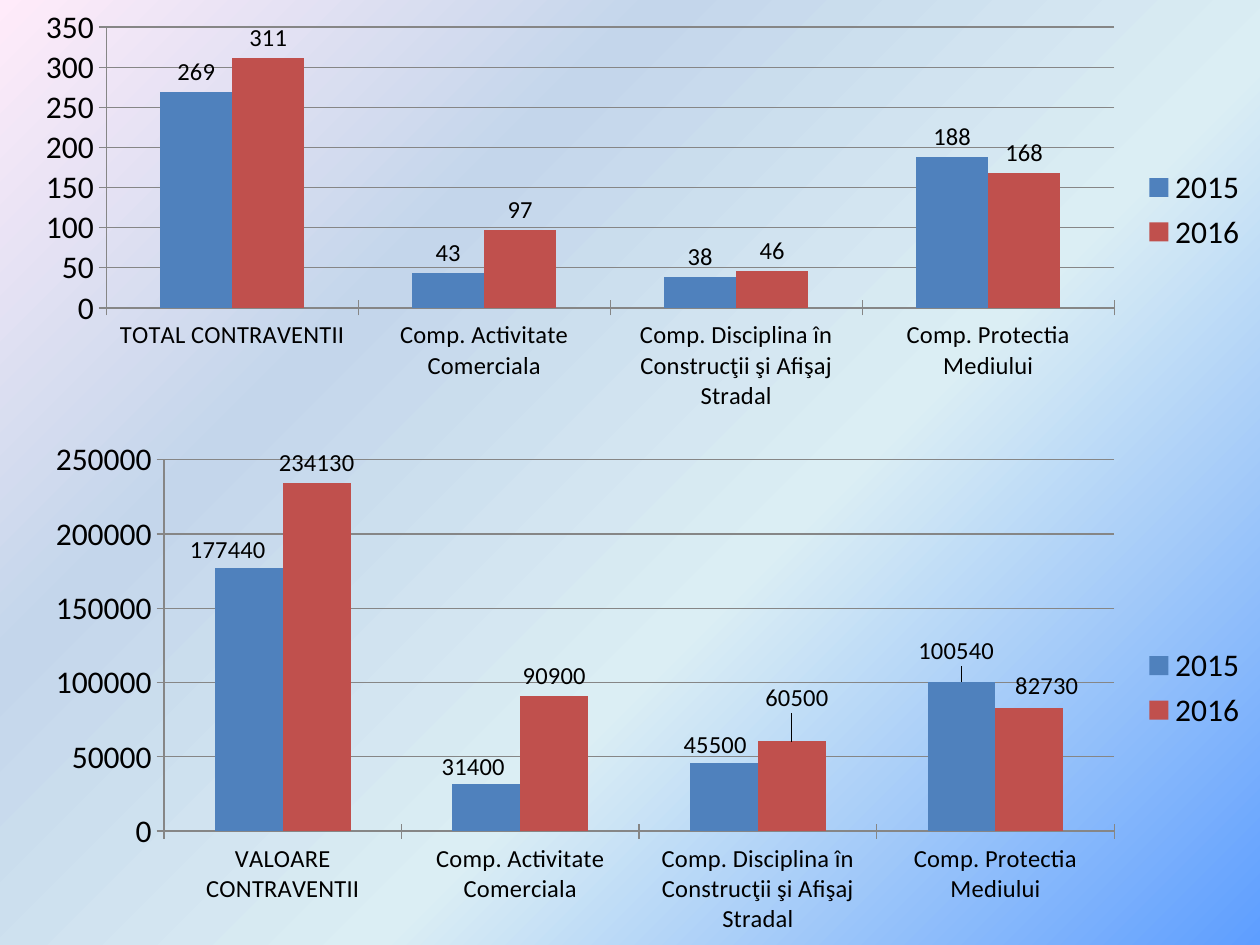
from lxml import etree
from pptx import Presentation
from pptx.chart.data import CategoryChartData
from pptx.dml.color import RGBColor
from pptx.enum import chart as ch
from pptx.oxml import parse_xml
from pptx.oxml.ns import nsdecls, qn
from pptx.util import Pt

YEARS = {"2015": "4F81BD", "2016": "C0504D"}
DEPARTMENTS = [
    "Comp. Activitate Comerciala",
    "Comp. Disciplina în Construcţii şi Afişaj Stradal",
    "Comp. Protectia Mediului",
]
GRADIENT = [(0, "5E9EFF"), (40, "DBEEF4"), (70, "C4D6EB"), (100, "FFEBFA")]


def rgb(value):
    return RGBColor.from_string(value)


def set_font(font, size):
    formats = {"name": "Calibri", "size": Pt(size), "bold": False}
    for key, value in formats.items():
        setattr(font, key, value)
    font.color.rgb = rgb("000000")


def set_background(s):
    """Radial gradient spreading from the bottom right corner."""
    s.background.fill.gradient()
    grad = s.element.find(".//" + qn("a:gradFill"))
    for child in list(grad):
        grad.remove(child)
    stops = etree.SubElement(grad, qn("a:gsLst"))
    for pos, colour in GRADIENT:
        stop = etree.SubElement(stops, qn("a:gs"), pos=str(pos * 1000))
        etree.SubElement(stop, qn("a:srgbClr"), val=colour)
    radial = etree.SubElement(grad, qn("a:path"))
    radial.set("path", "circle")
    etree.SubElement(radial, qn("a:fillToRect"), l="100000", t="100000")


def manual_layout(**values):
    """Chart layout element; values are fractions of the chart, or modes."""
    items = "".join(f'<c:{key} val="{value}"/>' for key, value in values.items())
    return parse_xml(f'<c:layout {nsdecls("c")}><c:manualLayout>{items}'
                     "</c:manualLayout></c:layout>")


def place_plot(chart, box, plot):
    """Fix the inner plot area, given in points within the chart box."""
    area = chart.plots[0]._element.getparent()
    for old in area.findall(qn("c:layout")):
        area.remove(old)
    x, y, w, h = plot
    area.insert(0, manual_layout(
        layoutTarget="inner", xMode="edge", yMode="edge",
        x=x / box[2], y=y / box[3], w=w / box[2], h=h / box[3]))


def shift_label(series, index, box, dx, dy):
    label = series.points[index].data_label
    label.position = ch.XL_LABEL_POSITION.OUTSIDE_END
    set_font(label.font, 14)
    dlbl = series._element.xpath(f'c:dLbls/c:dLbl[c:idx/@val="{index}"]')[0]
    dlbl.insert(1, manual_layout(x=dx / box[2], y=dy / box[3]))


def format_axis(axis, size):
    axis.major_tick_mark = ch.XL_TICK_MARK.CROSS
    axis.minor_tick_mark = ch.XL_TICK_MARK.NONE
    set_font(axis.tick_labels.font, size)
    lines = [axis.format.line]
    if axis.has_major_gridlines:
        lines.append(axis.major_gridlines.format.line)
    for line in lines:
        line.color.rgb = rgb("868686")
        line.width = Pt(0.75)


def add_column_chart(s, box, plot, total, values, top, step, shifts):
    """Yearly columns; shifts maps (series, point) to a label offset."""
    data = CategoryChartData()
    data.categories = [total] + DEPARTMENTS
    for year, row in zip(YEARS, values):
        data.add_series(year, row)
    chart = s.shapes.add_chart(ch.XL_CHART_TYPE.COLUMN_CLUSTERED,
                               *map(Pt, box), data).chart
    set_font(chart.font, 18)
    chart.has_title = False
    chart.has_legend = True
    chart.legend.position = ch.XL_LEGEND_POSITION.RIGHT
    chart.legend.include_in_layout = False
    set_font(chart.legend.font, 18)

    axis = chart.value_axis
    limits = {"minimum_scale": 0, "maximum_scale": top, "major_unit": step,
              "has_major_gridlines": True}
    for key, value in limits.items():
        setattr(axis, key, value)
    format_axis(axis, 18)
    format_axis(chart.category_axis, 14)

    columns = chart.plots[0]
    columns.vary_by_categories = False
    columns.gap_width, columns.overlap = 150, 0
    for series, colour in zip(columns.series, YEARS.values()):
        series.format.fill.solid()
        series.format.fill.fore_color.rgb = rgb(colour)
        labels = series.data_labels
        labels.show_value = True
        labels.position = ch.XL_LABEL_POSITION.OUTSIDE_END
        set_font(labels.font, 14)
    for (row, index), (dx, dy) in shifts.items():
        shift_label(columns.series[row], index, box, dx, dy)
    place_plot(chart, box, plot)


def main():
    prs = Presentation()
    prs.slide_width, prs.slide_height = Pt(720), Pt(540)
    s = prs.slides.add_slide(prs.slide_layouts[6])
    set_background(s)
    add_column_chart(
        s, (12.24, 0, 707.76, 239.76), (48.5, 15.5, 576, 160.5),
        "TOTAL CONTRAVENTII",
        [(269, 43, 38, 188), (311, 97, 46, 168)], 350, 50, {})
    add_column_chart(
        s, (18, 246.24, 702, 293.76), (75.75, 16.5, 543, 212.25),
        "VALOARE CONTRAVENTII",
        [(177440, 31400, 45500, 100540), (234130, 90900, 60500, 82730)],
        250000, 50000,
        {(0, 0): (-12, 1.5), (0, 1): (-7.5, 1.5), (0, 2): (-5, 1),
         (0, 3): (-3, -6), (1, 2): (3, -13), (1, 3): (10, -1)})
    prs.save("out.pptx")


if __name__ == "__main__":
    main()
